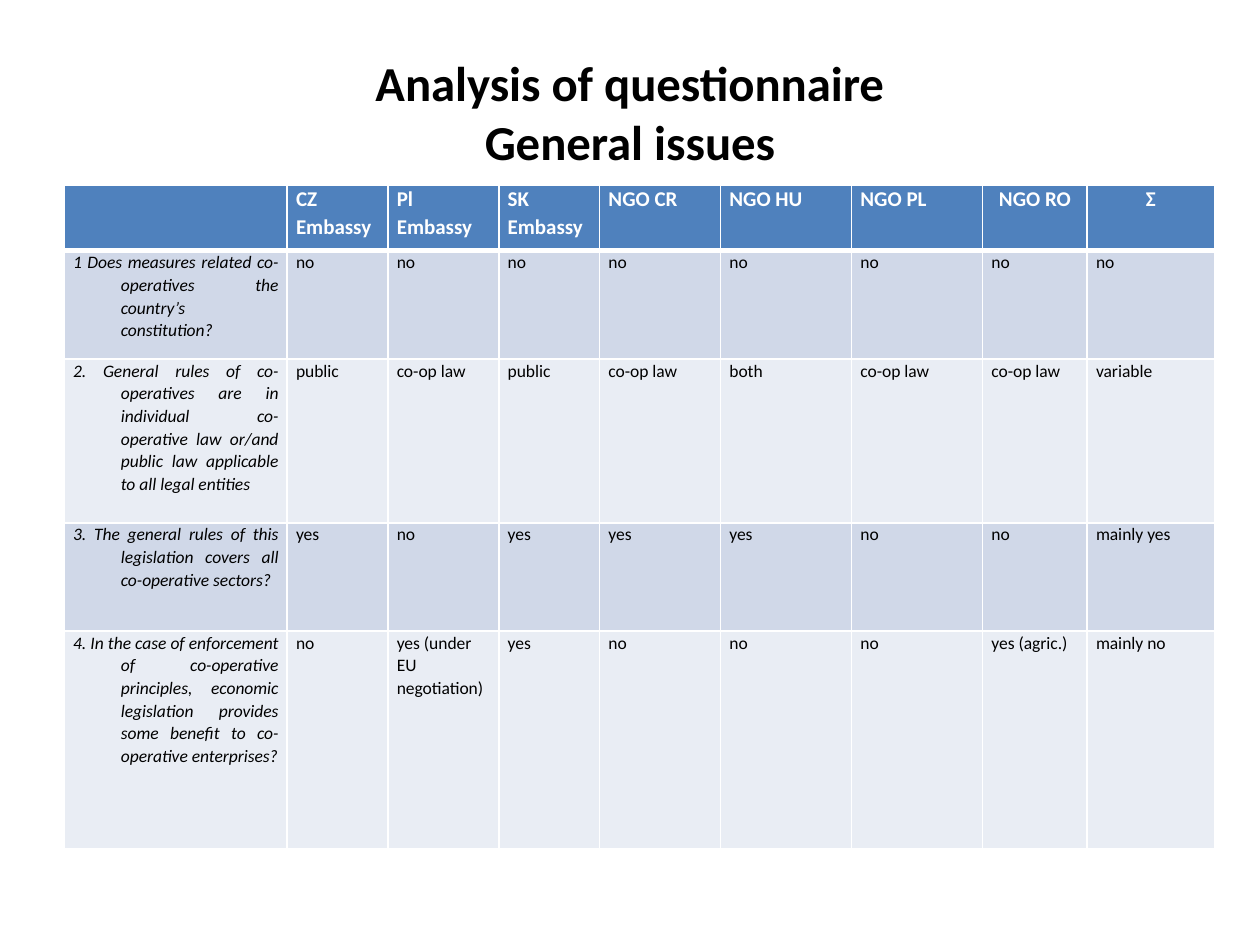
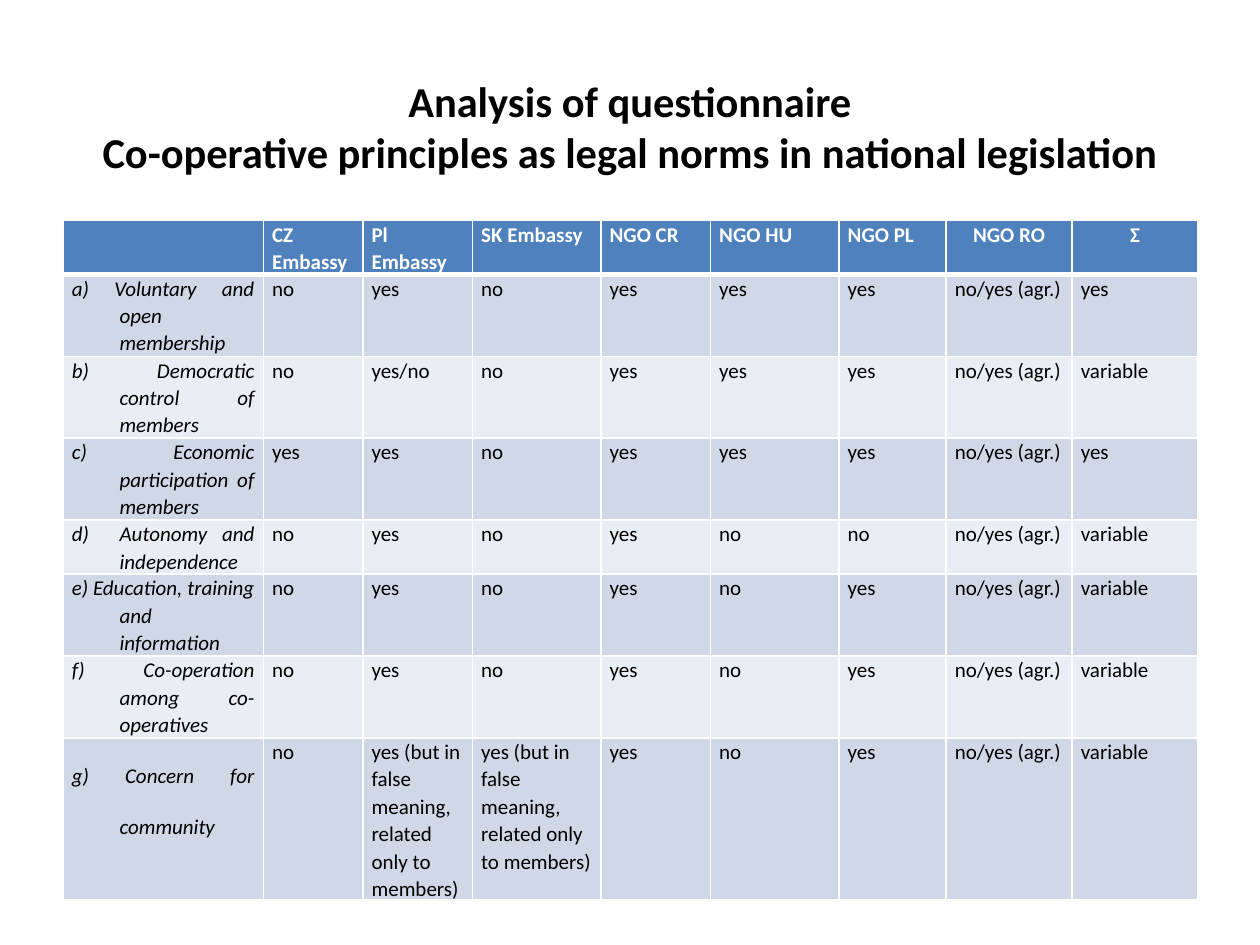
import lxml.etree
import pptx
import pptx.dml.color
import pptx.enum.text
import pptx.oxml.ns
import pptx.util

Inches = pptx.util.Inches
Pt = pptx.util.Pt
RGBColor = pptx.dml.color.RGBColor
Align = pptx.enum.text.PP_ALIGN
qn = pptx.oxml.ns.qn

BLACK = RGBColor(0, 0, 0)
WHITE = RGBColor(255, 255, 255)
HEADER_BLUE = RGBColor(0x4F, 0x81, 0xBD)
BAND_DARK = RGBColor(0xD0, 0xD8, 0xE8)
BAND_LIGHT = RGBColor(0xE9, 0xED, 0xF4)

RESPONDENTS = ["", "CZ Embassy", "Pl Embassy", "SK Embassy", "NGO CR",
               "NGO HU", "NGO PL", "NGO RO", "Σ"]
CENTERED_HEADINGS = ("NGO RO", "Σ")

GENERAL_ISSUES = [
    ["1 Does measures related co-operatives the country’s constitution?"] + ["no"] * 8,
    ["2. General rules of co-operatives are in individual co-operative law or/and "
     "public law applicable to all legal entities",
     "public", "co-op law", "public", "co-op law", "both", "co-op law", "co-op law", "variable"],
    ["3. The general rules of this legislation covers all co-operative sectors?",
     "yes", "no", "yes", "yes", "yes", "no", "no", "mainly yes"],
    ["4. In the case of enforcement of co-operative principles, economic legislation "
     "provides some benefit to co-operative enterprises?",
     "no", "yes (under EU negotiation)", "yes", "no", "no", "no", "yes (agric.)", "mainly no"],
]

AGRICULTURE = "no/yes (agr.)"
FALSE_MEANING = "yes (but in false meaning, related only to members)"
PRINCIPLES = [
    ["a) Voluntary and open membership",
     "no", "yes", "no", "yes", "yes", "yes", AGRICULTURE, "yes"],
    ["b) Democratic control of members",
     "no", "yes/no", "no", "yes", "yes", "yes", AGRICULTURE, "variable"],
    ["c) Economic participation of members",
     "yes", "yes", "no", "yes", "yes", "yes", AGRICULTURE, "yes"],
    ["d)\tAutonomy and independence",
     "no", "yes", "no", "yes", "no", "no", AGRICULTURE, "variable"],
    ["e) Education, training and information",
     "no", "yes", "no", "yes", "no", "yes", AGRICULTURE, "variable"],
    ["f) Co-operation among co-operatives",
     "no", "yes", "no", "yes", "no", "yes", AGRICULTURE, "variable"],
    ["g) Concern for community",
     "no", FALSE_MEANING, FALSE_MEANING, "yes", "no", "yes", AGRICULTURE, "variable"],
]


class Deck:
    font_name = "Calibri"
    line_spacing = 1.07

    def __init__(self):
        self.presentation = pptx.Presentation()
        self.presentation.slide_width = Inches(10)
        self.presentation.slide_height = Inches(7.5)
        self.slide = None

    def add_slide(self):
        self.slide = self.presentation.slides.add_slide(self.presentation.slide_layouts[6])

    def format_runs(self, paragraph, size, color, bold=False, italic=False):
        for run in paragraph.runs:
            run.font.name = self.font_name
            run.font.size = Pt(size)
            run.font.color.rgb = color
            run.font.bold = bold
            run.font.italic = italic

    def add_title(self, text, size, height, bottom_margin=0.05):
        shape = self.slide.shapes.add_textbox(Inches(0.5), Inches(0.29), Inches(9), Inches(height))
        text_frame = shape.text_frame
        text_frame.word_wrap = True
        text_frame.vertical_anchor = pptx.enum.text.MSO_ANCHOR.MIDDLE
        text_frame.margin_bottom = Inches(bottom_margin)
        paragraph = text_frame.paragraphs[0]
        paragraph.text = text
        paragraph.alignment = Align.CENTER
        self.format_runs(paragraph, size, BLACK, bold=True)

    def add_borders(self, cell, top=1, bottom=1):
        properties = cell._tc.get_or_add_tcPr()
        widths = {"a:lnL": 1, "a:lnR": 1, "a:lnT": top, "a:lnB": bottom}
        for position, (tag, width) in enumerate(widths.items()):
            line = lxml.etree.Element(qn(tag), w=str(Pt(width)))
            fill = lxml.etree.SubElement(line, qn("a:solidFill"))
            lxml.etree.SubElement(fill, qn("a:srgbClr"), val=str(WHITE))
            properties.insert(position, line)

    def fill_cell(self, cell, text, fill_color):
        cell.fill.solid()
        cell.fill.fore_color.rgb = fill_color
        cell.margin_left = cell.margin_right = Inches(0.07)
        cell.margin_top = cell.margin_bottom = 0
        paragraph = cell.text_frame.paragraphs[0]
        paragraph.text = text
        paragraph.line_spacing = self.line_spacing
        return paragraph

    def add_table(self, left, top, column_widths, row_heights, answers, size):
        table = self.slide.shapes.add_table(
            len(row_heights), len(column_widths), Inches(left), Inches(top),
            Inches(sum(column_widths)), Inches(sum(row_heights))).table
        for column, width in zip(table.columns, column_widths):
            column.width = Inches(width)
        for row, height in zip(table.rows, row_heights):
            row.height = Inches(height)

        for cell, heading in zip(table.rows[0].cells, RESPONDENTS):
            paragraph = self.fill_cell(cell, heading, HEADER_BLUE)
            if heading in CENTERED_HEADINGS:
                paragraph.alignment = Align.CENTER
            self.format_runs(paragraph, 12, WHITE, bold=True)
            self.add_borders(cell, bottom=3)

        for row_number, values in enumerate(answers, start=1):
            band = BAND_DARK if row_number % 2 else BAND_LIGHT
            for column_number, value in enumerate(values):
                cell = table.cell(row_number, column_number)
                paragraph = self.fill_cell(cell, value, band)
                is_question = column_number == 0
                if is_question:
                    self.hang_question(paragraph)
                self.format_runs(paragraph, size, BLACK, italic=is_question)
                self.add_borders(cell, top=3 if row_number == 1 else 1)
        return table

    def hang_question(self, paragraph):
        paragraph.alignment = Align.JUSTIFY
        properties = paragraph._p.get_or_add_pPr()
        properties.set("marL", str(Inches(0.38)))
        properties.set("indent", str(-Inches(0.38)))


def main():
    deck = Deck()

    deck.add_slide()
    deck.add_title("Analysis of questionnaire\vGeneral issues", 27.9, 1.81, bottom_margin=0.67)
    deck.add_table(0.51, 1.47, [1.77, 0.8, 0.88, 0.8, 0.96, 1.04, 1.04, 0.83, 1.01],
                   [0.52, 0.86, 1.3, 0.86, 1.73], GENERAL_ISSUES, 10)

    deck.add_slide()
    deck.add_title("Analysis of questionnaire\v"
                   "Co-operative principles as legal norms in national legislation", 24.3, 1.42)
    principles = deck.add_table(0.5, 1.75, [1.59, 0.79, 0.87, 1.02, 0.87, 1.02, 0.85, 1, 1],
                                [0.41, 0.65, 0.65, 0.65, 0.41, 0.65, 0.65, 1.22], PRINCIPLES, 12)
    principles.cell(7, 0).text_frame.paragraphs[0].line_spacing = 2.0

    deck.presentation.save("out.pptx")


if __name__ == "__main__":
    main()
